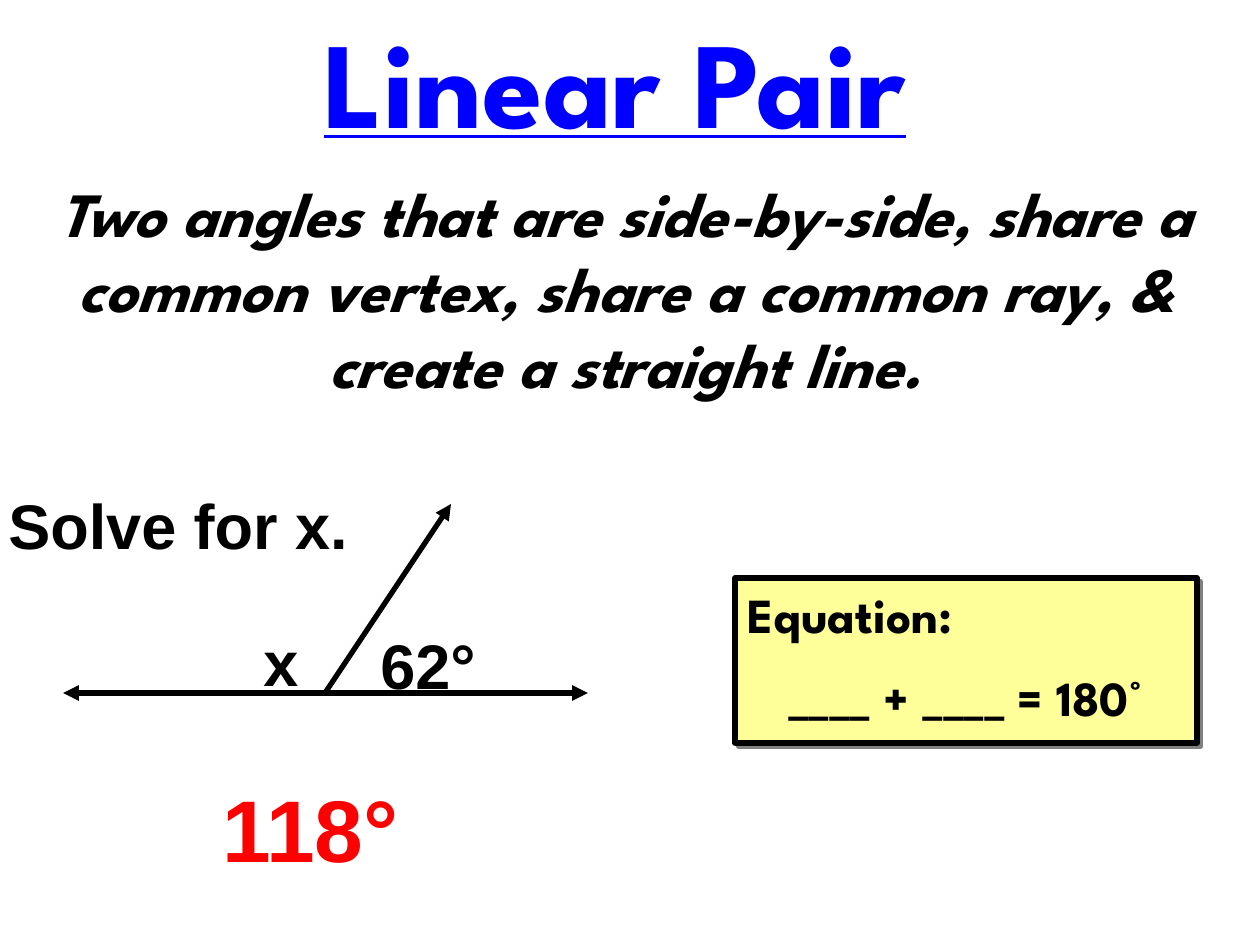
from lxml.etree import SubElement
from pptx import Presentation
from pptx.dml.color import RGBColor
from pptx.enum.shapes import MSO_CONNECTOR, MSO_SHAPE
from pptx.enum.text import MSO_ANCHOR, PP_ALIGN
from pptx.oxml.ns import qn
from pptx.util import Emu, Pt

THEME = {
    "ink": RGBColor.from_string("000000"),
    "blue": RGBColor.from_string("0000FF"),
    "red": RGBColor.from_string("FF0000"),
    "cream": RGBColor.from_string("FFFF99"),
    "shade": "808080",
    "head": "League Spartan",
    "body": "Arial",
    "title": 70, "answer": 50, "text": 36, "note": 28,
    "line": 3,
}
LEFT, MID = PP_ALIGN.LEFT, PP_ALIGN.CENTER


def px(n):
    return Emu(round(n * 914400 / 126))


def write(shape, rows, face, size, color="ink", gap=50, **style):
    frame = shape.text_frame
    frame.word_wrap = True
    frame.vertical_anchor = MSO_ANCHOR.TOP
    looks = {"name": THEME[face], "size": Pt(THEME[size]), "bold": True, **style}
    for i, (text, align) in enumerate(rows):
        para = frame.add_paragraph() if i else frame.paragraphs[0]
        para.alignment = align
        before = SubElement(para._p.get_or_add_pPr(), qn("a:spcBef"))
        SubElement(before, qn("a:spcPct"), val=str(gap * 1000))
        run = para.add_run()
        run.text = text
        for key, value in looks.items():
            setattr(run.font, key, value)
        run.font.color.rgb = THEME[color]


deck = Presentation()
deck.slide_width, deck.slide_height = px(1260), px(945)
slide = deck.slides.add_slide(deck.slide_layouts[6])
shapes = slide.shapes

title = shapes.add_textbox(px(0), px(0), px(1260), px(160))
title.text_frame.margin_right = px(42)
write(title, [("Linear Pair", MID)], "head", "title", "blue", underline=True)

answer = shapes.add_textbox(px(210), px(769), px(315), px(117))
write(answer, [("118°", LEFT)], "body", "answer", "red")

meaning = shapes.add_textbox(px(32), px(168), px(1187), px(262))
write(meaning, [("Two angles that are side-by-side, share a common vertex, "
                 "share a common ray, & create a straight line.", MID)],
      "head", "text", gap=20, italic=True)

figure = shapes.add_group_shape().shapes
rays = [
    ((63, 693, 588, 693), ("headEnd", "tailEnd")),
    ((325, 693, 451, 504), ("tailEnd",)),
]
for ends, tips in rays:
    ray = figure.add_connector(MSO_CONNECTOR.STRAIGHT, *map(px, ends))
    ray.line.color.rgb = THEME["ink"]
    ray.line.width = Pt(THEME["line"])
    for tip in tips:
        SubElement(ray.line._get_or_add_ln(), qn(f"a:{tip}"), type="triangle")
    SubElement(ray._element.spPr, qn("a:effectLst"))

labels = [
    ("62°", 368, 620, 158),
    ("x", 251, 617, 158),
    ("Solve for x.", -4, 480, 410),
]
for text, x, y, wide in labels:
    label = figure.add_textbox(px(x), px(y), px(wide), px(88))
    write(label, [(text, LEFT)], "body", "text")

card = shapes.add_shape(MSO_SHAPE.RECTANGLE, px(735), px(578), px(462), px(165))
card.shadow.inherit = False
card.fill.solid()
card.fill.fore_color.rgb = THEME["cream"]
card.line.color.rgb = THEME["ink"]
card.line.width = Pt(THEME["line"])
glow = SubElement(card._element.spPr.find(qn("a:effectLst")), qn("a:outerShdw"),
                  dist=str(Pt(2.8)), dir="2700000", algn="ctr", rotWithShape="0")
SubElement(glow, qn("a:srgbClr"), val=THEME["shade"])
write(card, [("Equation:", LEFT), ("____ + ____ = 180°", MID)], "head", "note")

deck.save("out.pptx")
